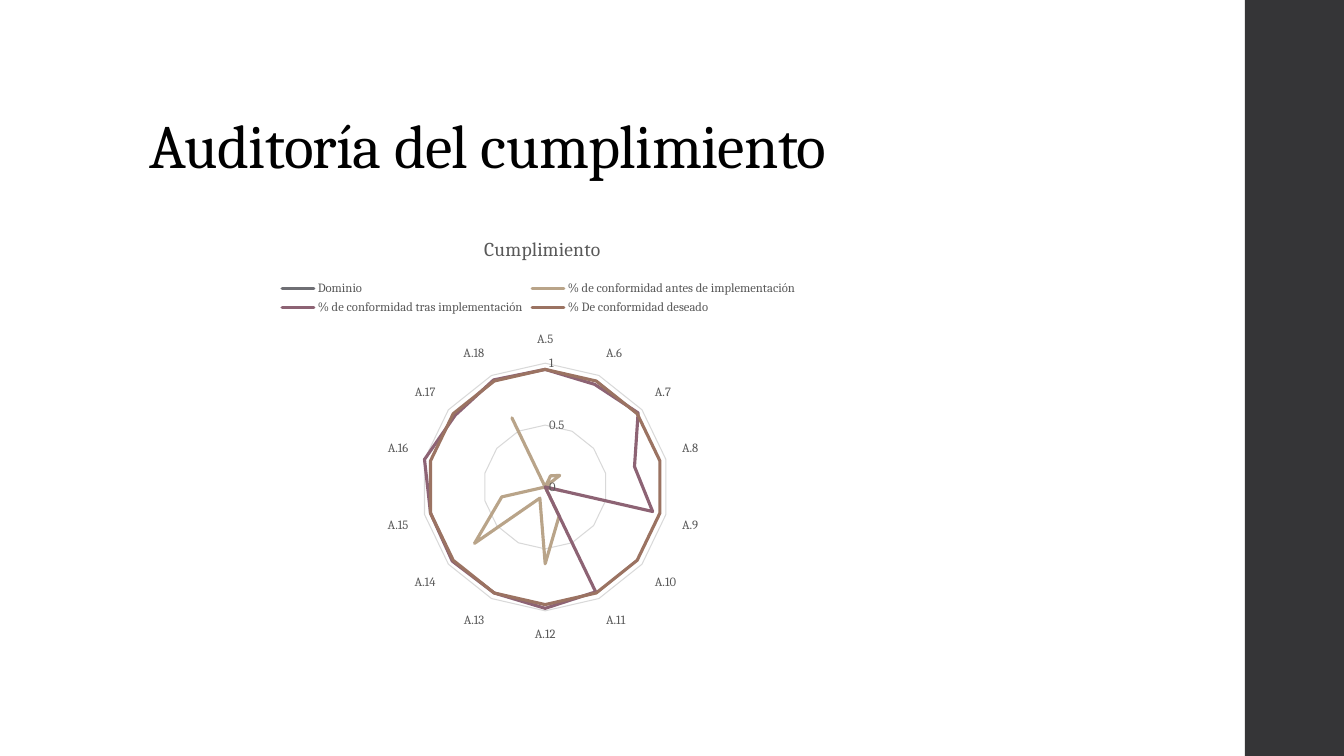
from lxml import etree
from pptx import Presentation
from pptx import util as u
from pptx.chart.data import CategoryChartData
from pptx.dml.color import RGBColor
from pptx.enum import chart as charts, shapes, text
from pptx.oxml.ns import qn

FONT = "Cambria"
GREY = "595959"
GRID = "D9D9D9"
DOMAINS = [f"A.{number}" for number in range(5, 19)]
UNLISTED = (1, 2)
SERIES = [
    ("Dominio", "6F6F74", [0] * 14),
    ("Series 2", "92A9B9", [None] * 14),
    ("Series 3", "A7B789", [None] * 14),
    ("% de conformidad antes de implementación", "B9A489",
     [0, 0.1, 0.15, 0, 0.14, 0, 0.26, 0.62, 0.1, 0.73, 0.36, 0, 0, 0.62]),
    ("% de conformidad tras implementación", "8D6374",
     [0.95, 0.92, 0.96, 0.74, 0.89, 0, 0.94, 0.98, 0.95, 0.96, 0.95, 1, 0.93, 0.96]),
    ("% De conformidad deseado", "9B7362", [0.95] * 14),
]


def color(hex_value):
    """Turn a hex string into a colour."""
    return RGBColor.from_string(hex_value)


def set_font(font, size, hex_value):
    """Set the face, size and colour of a font."""
    font.name = FONT
    font.size = u.Pt(size)
    font.bold = False
    font.color.rgb = color(hex_value)


def set_line(line, hex_value, width):
    """Set the colour and width of a line."""
    line.color.rgb = color(hex_value)
    line.width = u.Pt(width)


def set_layout(element, index, **fractions):
    """Place a chart part by fractions of the chart area."""
    for old_layout in element.findall(qn("c:layout")):
        element.remove(old_layout)
    layout = etree.Element(qn("c:layout"))
    manual = etree.SubElement(layout, qn("c:manualLayout"))
    if element.tag == qn("c:plotArea"):
        etree.SubElement(manual, qn("c:layoutTarget"), val="inner")
    for side in ("x", "y"):
        etree.SubElement(manual, qn(f"c:{side}Mode"), val="edge")
    for key, value in fractions.items():
        etree.SubElement(manual, qn(f"c:{key}"), val=str(value))
    element.insert(index, layout)


def drop_legend_entries(legend, indexes):
    """Leave the series without values out of the legend."""
    for position, index in enumerate(indexes, 1):
        entry = etree.Element(qn("c:legendEntry"))
        etree.SubElement(entry, qn("c:idx"), val=str(index))
        etree.SubElement(entry, qn("c:delete"), val="1")
        legend.insert(position, entry)


def add_side_band(slide):
    """Add the dark band on the right edge."""
    band = slide.shapes.add_shape(
        shapes.MSO_SHAPE.RECTANGLE, u.Cm(31.37), u.Cm(0), u.Cm(2.54), u.Cm(19.05))
    band.shadow.inherit = False
    band.fill.solid()
    band.fill.fore_color.rgb = color("353537")
    band.line.fill.background()


def fill_title(slide, wording):
    """Place and format the slide title."""
    title = slide.shapes.title
    title.left, title.top = u.Cm(3.51), u.Cm(1.02)
    title.width, title.height = u.Cm(26.92), u.Cm(3.68)
    frame = title.text_frame
    frame.text = wording
    frame.vertical_anchor = text.MSO_ANCHOR.BOTTOM
    frame.auto_size = text.MSO_AUTO_SIZE.NONE
    paragraph = frame.paragraphs[0]
    paragraph.alignment = text.PP_ALIGN.LEFT
    paragraph.line_spacing = 0.9
    set_font(paragraph.font, 44, "000000")
    paragraph._p.xpath("a:pPr/a:defRPr")[0].set("spc", "-50")


def format_axes(chart):
    """Format the domain labels and the value rings."""
    for axis in (chart.category_axis, chart.value_axis):
        axis.major_tick_mark = charts.XL_TICK_MARK.NONE
        axis.minor_tick_mark = charts.XL_TICK_MARK.NONE
        set_font(axis.tick_labels.font, 9, GREY)
    chart.category_axis.has_major_gridlines = False
    set_line(chart.category_axis.format.line, GRID, 0.75)
    values = chart.value_axis
    values.minimum_scale, values.maximum_scale, values.major_unit = 0, 1, 0.5
    values.tick_labels.number_format = "General"
    values.tick_labels.number_format_is_linked = False
    values.format.line.fill.background()
    values.has_major_gridlines = True
    set_line(values.major_gridlines.format.line, GRID, 0.75)


def add_radar(slide):
    """Add the compliance radar chart."""
    data = CategoryChartData()
    data.categories = DOMAINS
    for name, _, values in SERIES:
        data.add_series(name, values)
    chart = slide.shapes.add_chart(
        charts.XL_CHART_TYPE.RADAR, u.Cm(5.08), u.Cm(5.54),
        u.Cm(17.15), u.Cm(10.95), data).chart
    set_font(chart.font, 10, "000000")
    plot = chart.plots[0]
    plot.vary_by_categories = False
    for series, (_, hex_value, _) in zip(plot.series, SERIES):
        set_line(series.format.line, hex_value, 2.25)
    chart_area = chart._chartSpace.chart
    for outline in chart_area.xpath(".//c:ser/c:spPr/a:ln"):
        outline.set("cap", "rnd")
    format_axes(chart)

    chart.has_title = True
    title_frame = chart.chart_title.text_frame
    title_frame.text = "Cumplimiento"
    set_font(title_frame.paragraphs[0].font, 14, GREY)
    chart.has_legend = True
    legend = chart.legend
    legend.position = charts.XL_LEGEND_POSITION.TOP
    legend.include_in_layout = False
    set_font(legend.font, 9, GREY)

    legend_element = chart_area.find(qn("c:legend"))
    drop_legend_entries(legend_element, UNLISTED)
    set_layout(chart_area.find(qn("c:title")), 1, x=0.41, y=0.03)
    set_layout(legend_element, 1 + len(UNLISTED), x=0.11, y=0.13, w=0.77, h=0.1)
    set_layout(chart_area.plotArea, 0, x=0.32, y=0.33, w=0.37, h=0.57)


def main():
    """Build and save the slide."""
    presentation = Presentation()
    presentation.slide_width = u.Cm(33.87)
    presentation.slide_height = u.Cm(19.05)
    slide = presentation.slides.add_slide(presentation.slide_layouts[5])
    add_side_band(slide)
    fill_title(slide, "Auditoría del cumplimiento")
    add_radar(slide)
    presentation.save("out.pptx")


if __name__ == "__main__":
    main()
